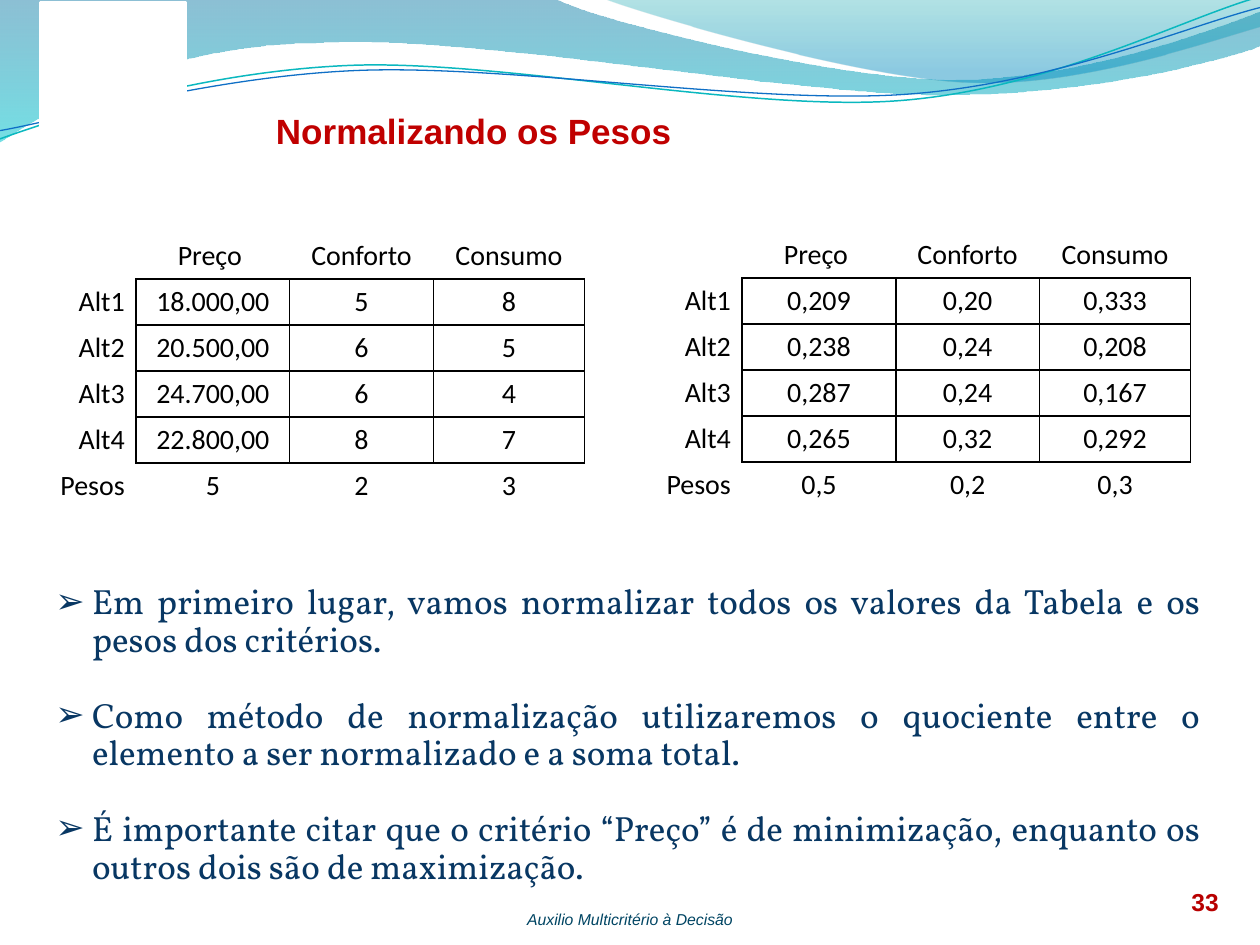
from lxml.etree import SubElement
from pptx import Presentation
from pptx.dml.color import RGBColor
from pptx.enum.shapes import MSO_SHAPE
from pptx.enum.text import MSO_ANCHOR as Anchor, MSO_AUTO_SIZE as AutoSize, PP_ALIGN as Align
from pptx.oxml.ns import qn
from pptx.util import Inches, Pt

WAVES = [
    dict(start=(0, -0.01),
         steps=[(4.4, -0.01), (4.76, 0.17, 6.64, 0.63, 7.58, 0.63),
                (8.53, 0.63, 9.58, 0.26, 10, 0.09), (10.01, 0.36),
                (9.83, 0.44, 8.7, 0.76, 7.46, 0.75), (6.22, 0.75, 3.82, 0.28, 2.57, 0.34),
                (1.29, 0.35, 0.46, 0.83, -0.01, 1.13)],
         gradient=[(0, "0074A1", 45), (1, "00C6CF", 55)]),
    dict(start=(4.79, -0.01),
         steps=[(5.09, 0.11, 6.82, 0.62, 7.69, 0.65), (8.56, 0.69, 9.61, 0.32, 10, 0.21),
                (10, 0)],
         gradient=[(0, "00A1A9", 30), (0.8, "008BBF", 45)]),
    dict(start=(-0.02, 1.11),
         steps=[(0.48, 0.93, 1.58, 0.57, 2.77, 0.52), (3.95, 0.47, 5.93, 0.89, 7.13, 0.8),
                (8.33, 0.71, 9.38, 0.15, 9.98, -0.02)],
         line=("0AB8BF", 0.85)),
    dict(start=(-0.02, 1.04),
         steps=[(0.47, 0.96, 1.64, 0.61, 2.83, 0.56), (4.03, 0.51, 5.97, 0.83, 7.17, 0.75),
                (8.36, 0.67, 9.41, 0.21, 10, 0.06)],
         line=("0F6FC6", 0.75)),
]
CRITERIA = ["", "Preço ", "Conforto", "Consumo"]
ORIGINAL_VALUES = [
    CRITERIA,
    ["Alt1", "18.000,00", "5", "8"],
    ["Alt2", "20.500,00", "6", "5"],
    ["Alt3", "24.700,00", "6", "4"],
    ["Alt4", "22.800,00", "8", "7"],
    ["Pesos", "5", "2", "3"],
]
NORMALIZED_VALUES = [
    CRITERIA,
    ["Alt1", "0,209", "0,20", "0,333"],
    ["Alt2", "0,238", "0,24", "0,208"],
    ["Alt3", "0,287", "0,24", "0,167"],
    ["Alt4", "0,265", "0,32", "0,292"],
    ["Pesos", "0,5", "0,2", "0,3"],
]
COLUMN_WIDTHS = [1, 1.22, 1.14, 1.2]
NOTES = [
    "Em primeiro lugar, vamos normalizar todos os valores da Tabela e os pesos dos critérios.",
    "Como método de normalização utilizaremos o quociente entre o elemento a ser normalizado "
    "e a soma total.",
    "É importante citar que o critério “Preço” é de minimização, enquanto os outros dois são "
    "de maximização.",
]
NO_STYLE_NO_GRID = "{2D5ABB26-0587-4C30-8999-92F81FD0307C}"


def color(hex_string):
    return RGBColor.from_string(hex_string)


def bend(shape, steps):
    """Join the three segments of every six-number step into one cubic curve."""
    segments = iter(list(shape._element.iter(qn("a:lnTo"))))
    for step in steps:
        first = next(segments)
        if len(step) == 2:
            continue
        curve = first.makeelement(qn("a:cubicBezTo"), {})
        first.addprevious(curve)
        for segment in (first, next(segments), next(segments)):
            curve.append(segment[0])
            segment.getparent().remove(segment)


class SlideBuilder:
    heading_font = "Arial"
    table_font = "Calibri"
    body_font = "Vollkorn"

    def __init__(self, slide):
        self.slide = slide
        self.shapes = slide.shapes

    def format(self, paragraph, name, size, hex_string, align, bold=False, italic=False):
        paragraph.alignment = align
        font = paragraph.font
        font.name, font.size, font.bold, font.italic = name, Pt(size), bold, italic
        font.color.rgb = color(hex_string)

    def wave(self, start, steps, gradient=None, line=None):
        """Draw a filled outline or an open line; a step is a line end or a curve."""
        points = [tuple(map(Inches, step[i:i + 2]))
                  for step in steps for i in range(0, len(step), 2)]
        builder = self.shapes.build_freeform(*map(Inches, start))
        builder.add_line_segments(points, close=gradient is not None)
        shape = builder.convert_to_shape()
        bend(shape, steps)
        shape.shadow.inherit = False
        if line:
            shape.fill.background()
            shape.line.color.rgb = color(line[0])
            shape.line.width = Pt(line[1])
            return
        shape.line.fill.background()
        shape.fill.gradient()
        shape.fill.gradient_angle = 270
        for stop, (position, hex_string, _) in zip(shape.fill.gradient_stops, gradient):
            stop.position = position
            stop.color.rgb = color(hex_string)
        for element, (_, _, opacity) in zip(shape._element.iter(qn("a:gs")), gradient):
            SubElement(element[0], qn("a:alpha"), val=str(opacity * 1000))

    def white_panel(self, *box):
        shape = self.shapes.add_shape(MSO_SHAPE.RECTANGLE, *map(Inches, box))
        shape.shadow.inherit = False
        shape.fill.solid()
        shape.fill.fore_color.rgb = shape.line.color.rgb = color("FFFFFF")
        shape.line.width = Pt(2)

    def placeholder(self, index, *box):
        """Move a placeholder to the box, in front of what is drawn so far."""
        shape = self.slide.placeholders[index]
        shape.left, shape.top, shape.width, shape.height = map(Inches, box)
        self.shapes._spTree.append(shape._element)
        frame = shape.text_frame
        frame.word_wrap = True
        frame.auto_size = AutoSize.NONE
        frame.vertical_anchor = Anchor.TOP
        return frame

    def title(self, text, *box):
        frame = self.placeholder(0, *box)
        frame.text = text
        self.format(frame.paragraphs[0], self.heading_font, 20, "C00000", Align.LEFT, bold=True)

    def bullets(self, texts, *box):
        frame = self.placeholder(1, *box)
        for number, text in enumerate(texts):
            paragraph = frame.add_paragraph() if number else frame.paragraphs[0]
            paragraph.text = text
            paragraph.line_spacing = 0.9
            paragraph.space_before = Pt(21.5 if number else 0)
            properties = paragraph._p.get_or_add_pPr()
            properties.set("marL", str(Inches(0.29)))
            properties.set("indent", str(-Inches(0.29)))
            SubElement(properties, qn("a:buChar"), char="➢")
            self.format(paragraph, self.body_font, 20, "083763", Align.JUSTIFY)

    def text(self, text, *box, size, hex_string, inset=None, line_spacing=None, **style):
        frame = self.shapes.add_textbox(*map(Inches, box)).text_frame
        frame.word_wrap = True
        if inset is not None:
            frame.margin_left = frame.margin_right = Inches(inset)
            frame.margin_top = frame.margin_bottom = Inches(inset)
        paragraph = frame.paragraphs[0]
        paragraph.text = text
        paragraph.line_spacing = line_spacing
        self.format(paragraph, self.heading_font, size, hex_string, Align.CENTER, **style)

    def border(self, cell):
        properties = cell._tc.get_or_add_tcPr()
        for position, side in enumerate(("a:lnL", "a:lnR", "a:lnT", "a:lnB")):
            line = properties.makeelement(qn(side), {"w": str(Pt(1))})
            SubElement(SubElement(line, qn("a:solidFill")), qn("a:srgbClr"), val="000000")
            properties.insert(position, line)

    def table(self, rows, left, top, height=2.19):
        frame = self.shapes.add_table(
            len(rows), len(COLUMN_WIDTHS), Inches(left), Inches(top),
            Inches(sum(COLUMN_WIDTHS)), Inches(height))
        table = frame.table
        table.first_row = table.horz_banding = False
        table._tbl.tblPr.find(qn("a:tableStyleId")).text = NO_STYLE_NO_GRID
        for column, width in zip(table.columns, COLUMN_WIDTHS):
            column.width = Inches(width)
        for row_number, row in enumerate(rows):
            for column_number, value in enumerate(row):
                cell = table.cell(row_number, column_number)
                cell.text = value
                cell.fill.background()
                cell.margin_left = cell.margin_right = Inches(0.09)
                cell.margin_top = cell.margin_bottom = Pt(3.3)
                is_value = row_number > 0 and column_number > 0
                cell.vertical_anchor = Anchor.MIDDLE if is_value else Anchor.TOP
                if is_value and row_number < len(rows) - 1:
                    self.border(cell)
                align = Align.CENTER if column_number else Align.RIGHT
                self.format(cell.text_frame.paragraphs[0], self.table_font, 16, "000000", align)


def main():
    presentation = Presentation()
    presentation.slide_width, presentation.slide_height = Inches(10), Inches(7.5)
    builder = SlideBuilder(presentation.slides.add_slide(presentation.slide_layouts[1]))
    for wave in WAVES:
        builder.wave(**wave)
    builder.text("Auxilio Multicritério à Decisão", 0, 7.22, 10, 0.15,
                 size=9, hex_string="004563", inset=0, italic=True)
    builder.text("33", 9.15, 6.89, 0.83, 0.4,
                 size=14, hex_string="B80000", line_spacing=Pt(24), bold=True)
    builder.white_panel(0.32, 0.02, 1.15, 0.98)
    builder.title("Normalizando os Pesos", 2.09, 0.82, 7.69, 0.33)
    builder.table(ORIGINAL_VALUES, 0.08, 1.85)
    builder.table(NORMALIZED_VALUES, 4.89, 1.84)
    builder.bullets(NOTES, 0.34, 4.59, 9.29, 2.52)
    presentation.save("out.pptx")


if __name__ == "__main__":
    main()
